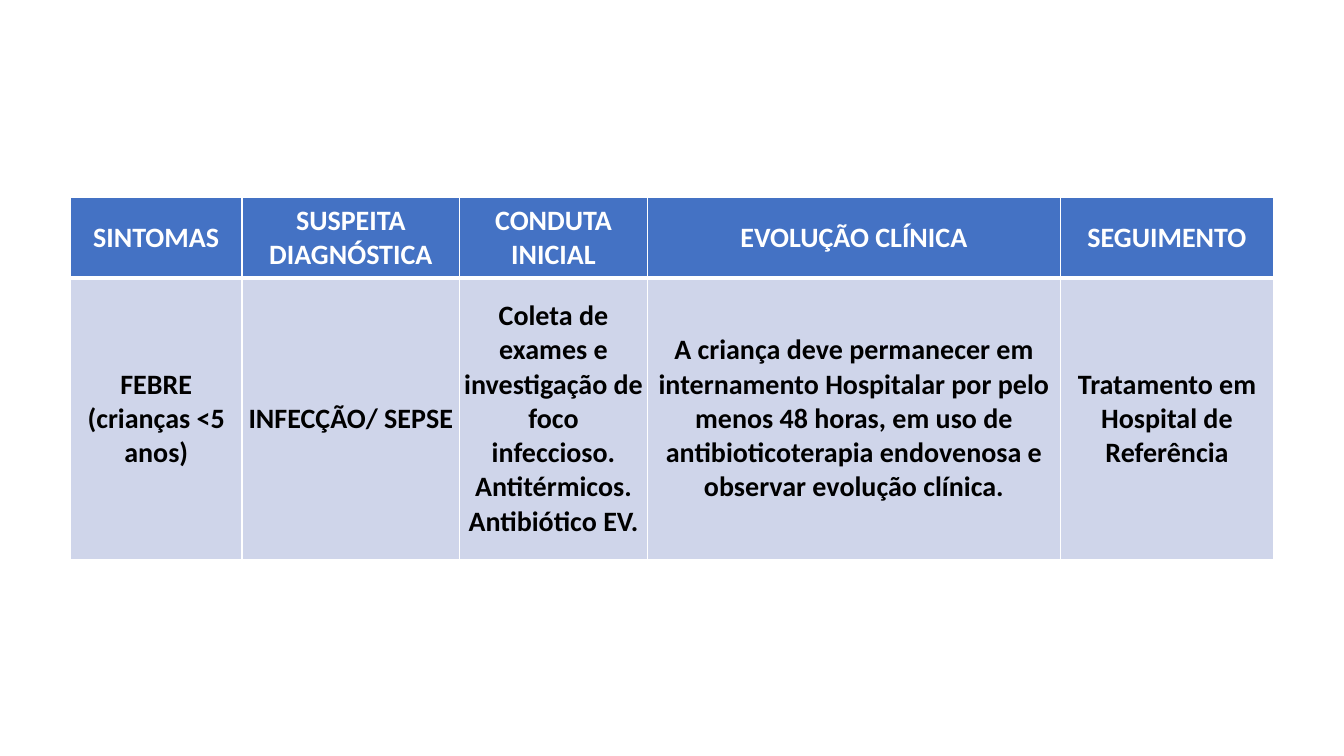
"""Build a slide with a table on the management of fever in young children."""
from lxml import etree
from pptx import Presentation
from pptx.dml.color import RGBColor
from pptx.enum.text import MSO_ANCHOR, PP_ALIGN
from pptx.oxml.ns import qn
from pptx.util import Inches, Pt

CENTER = PP_ALIGN.CENTER
MIDDLE = MSO_ANCHOR.MIDDLE
WHITE = "FFFFFF"
COLUMN_WIDTHS = [1.7, 2.16, 1.86, 4.1, 2.11]
ROWS = [
    {"height": 0.8, "fill": "4472C4", "color": WHITE,
     "borders": {"lnL": 1, "lnR": 1, "lnT": 1, "lnB": 3},
     "texts": ["SINTOMAS", "SUSPEITA DIAGNÓSTICA", "CONDUTA INICIAL",
               "EVOLUÇÃO CLÍNICA", "SEGUIMENTO"]},
    {"height": 2.79, "fill": "CFD5EA", "color": "000000",
     "borders": {"lnL": 1, "lnR": 1, "lnT": 3, "lnB": 1},
     "texts": ["FEBRE\n(crianças <5 anos)",
               "INFECÇÃO/ SEPSE",
               "Coleta de exames e investigação de foco infeccioso.\n"
               "Antitérmicos.\nAntibiótico EV.",
               "A criança deve permanecer em internamento Hospitalar por pelo menos "
               "48 horas, em uso de antibioticoterapia endovenosa e observar evolução clínica.",
               "Tratamento em Hospital de Referência"]},
]
CELL_FORMAT = {"vertical_anchor": MIDDLE}
for side in ("left", "top", "right", "bottom"):
    CELL_FORMAT[f"margin_{side}"] = Inches(0.04)
FONT_FORMAT = {"name": "Calibri", "size": Pt(20), "bold": True}


def rgb(value):
    return RGBColor.from_string(value)


def add_borders(cell, borders):
    properties = cell._tc.get_or_add_tcPr()
    for position, (tag, width) in enumerate(borders.items()):
        line = etree.Element(qn(f"a:{tag}"), w=str(Pt(width)))
        fill = etree.SubElement(line, qn("a:solidFill"))
        etree.SubElement(fill, qn("a:srgbClr"), val=WHITE)
        properties.insert(position, line)


deck = Presentation()
deck.slide_width = Inches(13.33)
deck.slide_height = Inches(7.5)
page = deck.slides.add_slide(deck.slide_layouts[6])

table = page.shapes.add_table(
    len(ROWS), len(COLUMN_WIDTHS), Inches(0.7), Inches(1.96),
    Inches(sum(COLUMN_WIDTHS)), Inches(sum(row["height"] for row in ROWS))).table
for column, width in zip(table.columns, COLUMN_WIDTHS):
    column.width = Inches(width)

for table_row, row in zip(table.rows, ROWS):
    table_row.height = Inches(row["height"])
    for cell, text in zip(table_row.cells, row["texts"]):
        cell.text = text
        for name, value in CELL_FORMAT.items():
            setattr(cell, name, value)
        cell.fill.solid()
        cell.fill.fore_color.rgb = rgb(row["fill"])
        add_borders(cell, row["borders"])
        for para in cell.text_frame.paragraphs:
            para.alignment = CENTER
            for span in para.runs:
                for name, value in FONT_FORMAT.items():
                    setattr(span.font, name, value)
                span.font.color.rgb = rgb(row["color"])

deck.save("out.pptx")
